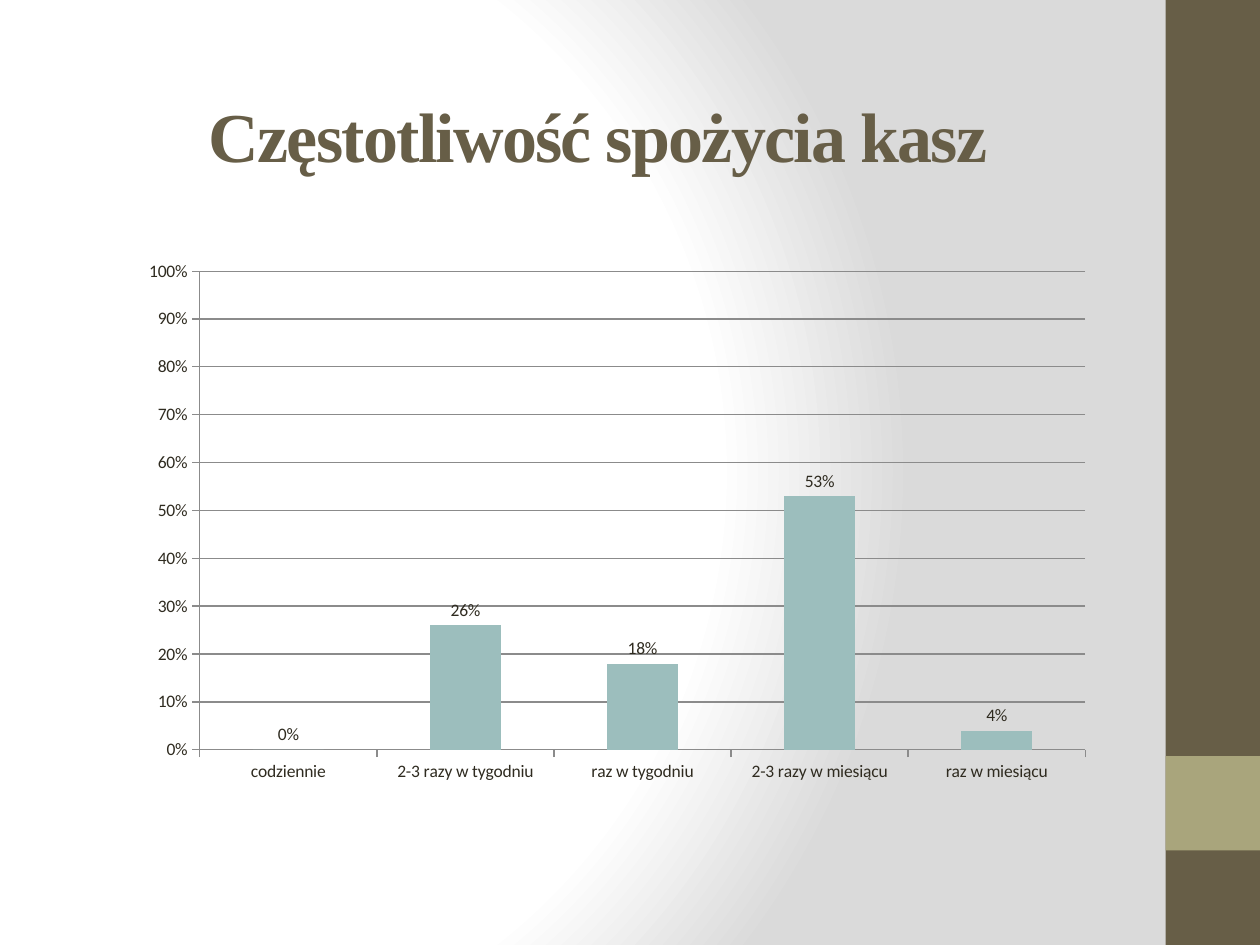
from pptx import Presentation
from pptx.chart.data import CategoryChartData
from pptx.dml.color import RGBColor
from pptx.enum.chart import XL_CHART_TYPE, XL_LABEL_POSITION, XL_TICK_MARK
from pptx.enum.shapes import MSO_SHAPE
from pptx.enum.text import MSO_ANCHOR, PP_ALIGN
from pptx.oxml import parse_xml
from pptx.oxml.ns import nsdecls, qn
from pptx.util import Pt

COLUMNS = XL_CHART_TYPE.COLUMN_CLUSTERED
OUTSIDE_END = XL_LABEL_POSITION.OUTSIDE_END
TICK_OUT, TICK_NONE = XL_TICK_MARK.OUTSIDE, XL_TICK_MARK.NONE
RECTANGLE = MSO_SHAPE.RECTANGLE
MIDDLE, CENTER = MSO_ANCHOR.MIDDLE, PP_ALIGN.CENTER

BROWN = RGBColor(0x67, 0x5E, 0x47)
OLIVE = RGBColor(0xA9, 0xA5, 0x7C)
TEAL = RGBColor(0x9C, 0xBE, 0xBD)
INK = RGBColor(0x2F, 0x2B, 0x20)
AXIS_GRAY = RGBColor(0x8B, 0x8B, 0x8B)
WHITE = RGBColor(0xFF, 0xFF, 0xFF)
LIGHT_GRAY = RGBColor(0xDA, 0xDA, 0xDA)

WIDTH, HEIGHT = 720, 540
BAND = 54
FREQUENCIES = {
    "codziennie": 0,
    "2-3 razy w tygodniu": 0.26,
    "raz w tygodniu": 0.18,
    "2-3 razy w miesiącu": 0.53,
    "raz w miesiącu": 0.04,
}


def apply(target, formats):
    for name, value in formats.items():
        setattr(target, name, value)


class SlideBuilder:
    title_font = {"name": "Times New Roman", "size": Pt(40), "bold": True}
    chart_font = {"name": "Calibri", "size": Pt(10), "bold": False}
    percent = {"number_format": "0%", "number_format_is_linked": False}

    def __init__(self, page):
        self.page = page

    def background(self, stops, focus):
        """Radial gradient; focus gives the inner rectangle's insets in percent."""
        fill = self.page.background.fill
        fill.solid()
        stop_xml = "".join(
            f'<a:gs pos="{position * 1000}"><a:srgbClr val="{color}"/></a:gs>'
            for position, color in stops)
        insets = " ".join(f'{side}="{inset * 1000}"' for side, inset in zip("ltrb", focus))
        gradient = parse_xml(
            f'<a:gradFill {nsdecls("a")} rotWithShape="1"><a:gsLst>{stop_xml}</a:gsLst>'
            f'<a:path path="circle"><a:fillToRect {insets}/></a:path></a:gradFill>')
        solid = next(self.page.element.iter(qn("a:solidFill")))
        solid.getparent().replace(solid, gradient)

    def rectangle(self, left, top, width, height, color):
        shape = self.page.shapes.add_shape(RECTANGLE, *map(Pt, (left, top, width, height)))
        shape.shadow.inherit = False
        shape.fill.solid()
        shape.fill.fore_color.rgb = color
        shape.line.fill.background()

    def title(self, left, top, width, height, text):
        box = self.page.shapes.add_textbox(*map(Pt, (left, top, width, height)))
        apply(box.text_frame, {"word_wrap": True, "vertical_anchor": MIDDLE})
        para = box.text_frame.paragraphs[0]
        para.alignment = CENTER
        span = para.add_run()
        span.text = text
        apply(span.font, self.title_font)
        span.font.color.rgb = BROWN
        span.font._element.set("spc", "-100")

    def axis(self, axis):
        apply(axis, {"major_tick_mark": TICK_OUT, "minor_tick_mark": TICK_NONE})
        self.axis_line(axis.format.line)

    def axis_line(self, line):
        line.width = Pt(0.75)
        line.color.rgb = AXIS_GRAY

    def column_chart(self, left, top, width, height, values, plot_area):
        data = CategoryChartData(number_format="0%")
        data.categories = values.keys()
        data.add_series("Series 1", values.values())
        chart = self.page.shapes.add_chart(
            COLUMNS, *map(Pt, (left, top, width, height)), data).chart
        apply(chart, {"has_legend": False, "has_title": False})
        apply(chart.font, self.chart_font)
        chart.font.color.rgb = INK

        self.axis(chart.category_axis)
        chart.category_axis.has_major_gridlines = False
        scale = chart.value_axis
        self.axis(scale)
        apply(scale, {"minimum_scale": 0, "maximum_scale": 1, "major_unit": 0.1,
                      "has_major_gridlines": True})
        apply(scale.tick_labels, self.percent)
        self.axis_line(scale.major_gridlines.format.line)

        plot = chart.plots[0]
        apply(plot, {"gap_width": 150, "vary_by_categories": False, "has_data_labels": True})
        apply(plot.data_labels, {"show_value": True, "position": OUTSIDE_END, **self.percent})
        bars = plot.series[0].format.fill
        bars.solid()
        bars.fore_color.rgb = TEAL
        self.place_plot(chart, plot_area)

    def place_plot(self, chart, plot_area):
        """Fix the inner plot area, given as fractions of the chart."""
        places = "".join(f'<c:{name} val="{value}"/>'
                         for name, value in zip("xywh", plot_area))
        layout = parse_xml(
            f'<c:layout {nsdecls("c")}><c:manualLayout><c:layoutTarget val="inner"/>'
            f'<c:xMode val="edge"/><c:yMode val="edge"/>{places}'
            '</c:manualLayout></c:layout>')
        area = next(chart.element.iter(qn("c:plotArea")))
        for old in area.findall(qn("c:layout")):
            area.remove(old)
        area.insert(0, layout)


def main():
    deck = Presentation()
    apply(deck, {"slide_width": Pt(WIDTH), "slide_height": Pt(HEIGHT)})
    builder = SlideBuilder(deck.slides.add_slide(deck.slide_layouts[6]))
    builder.background([(0, WHITE), (75, WHITE), (100, LIGHT_GRAY)], (20, 50, 100, 50))
    builder.rectangle(WIDTH - BAND, 0, BAND, HEIGHT, BROWN)
    builder.rectangle(WIDTH - BAND, HEIGHT - 2 * BAND, BAND, BAND, OLIVE)
    builder.title(48, 21.6, 587.5, 111, "Częstotliwość spożycia kasz")
    builder.column_chart(65.5, 139.7, 572.4, 339.8, FREQUENCIES, (0.085, 0.045, 0.884, 0.805))
    deck.save("out.pptx")


if __name__ == "__main__":
    main()
